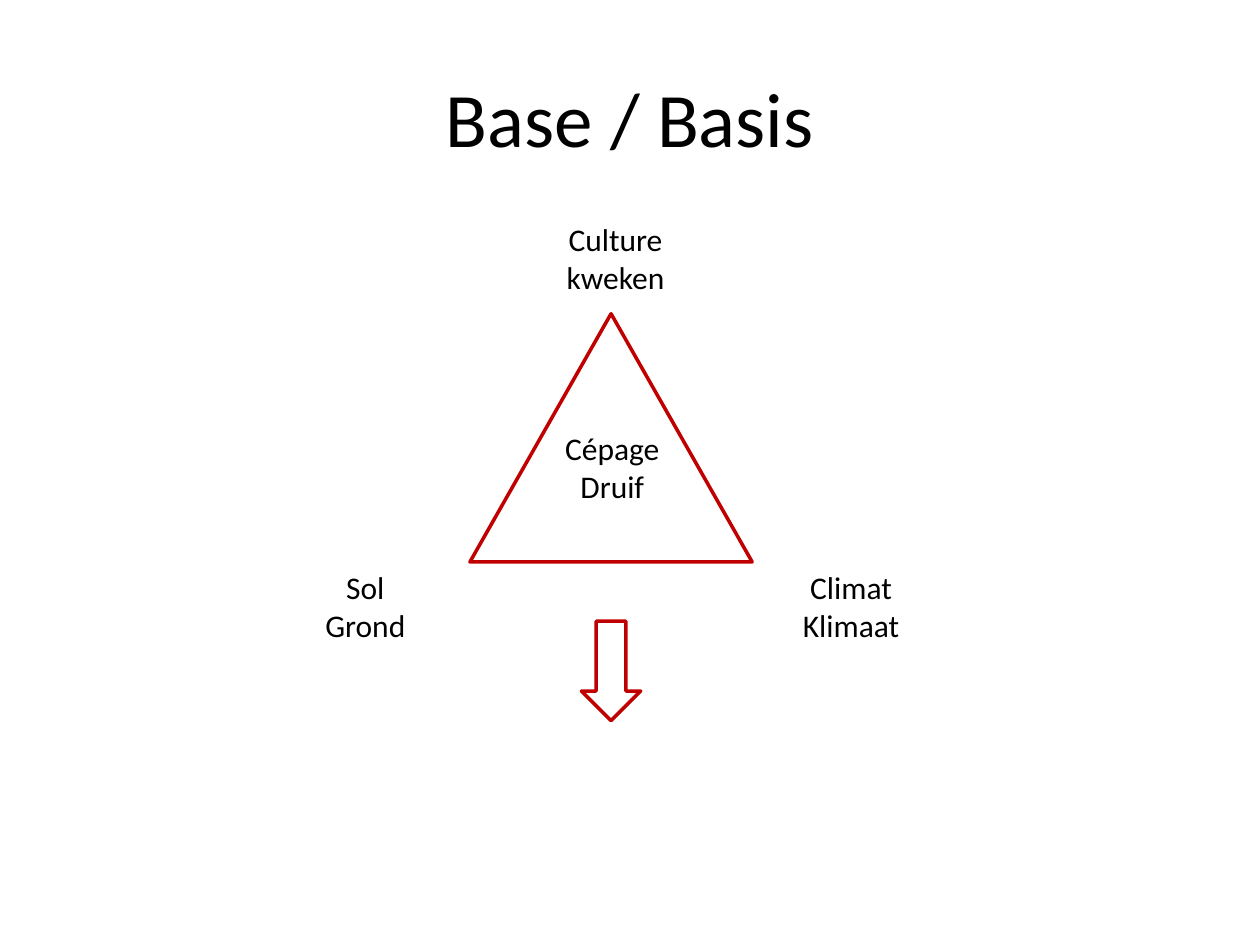
from dataclasses import dataclass

from pptx import Presentation, util as u
from pptx.dml.color import RGBColor
from pptx.enum import shapes, text

RED = RGBColor(0xC0, 0x00, 0x00)
BLACK = RGBColor(0x00, 0x00, 0x00)
WIDE, HIGH = u.Inches(10), u.Inches(7.5)
FONT = "Calibri"


@dataclass(frozen=True)
class Box:
    """Middle, top, width and height, as percent of the slide's size."""
    mid: float
    top: float
    width: float
    height: float

    def place(self) -> tuple[int, ...]:
        left = self.mid - self.width / 2
        pairs = ((left, WIDE), (self.top, HIGH), (self.width, WIDE), (self.height, HIGH))
        return tuple(round(part * full / 100) for part, full in pairs)


@dataclass(frozen=True)
class Label:
    words: str
    box: Box
    size: int = 18
    wrap: bool = False


@dataclass(frozen=True)
class Mark:
    kind: shapes.MSO_SHAPE
    box: Box


AXIS = 48.5
ROW = 9.47
BASE = 59.47

TITLE = Label("Base / Basis", Box(50, 4, 90, 16.67), 44, True)
MARKS = (
    Mark(shapes.MSO_SHAPE.DOWN_ARROW, Box(AXIS, 65.73, 4.7, 10.53)),
    Mark(shapes.MSO_SHAPE.ISOSCELES_TRIANGLE, Box(AXIS, 33.2, 22.4, 26.27)),
)
# \v breaks a line, \n starts a paragraph
LABELS = (
    Label("Cépage\vDruif", Box(48.6, 44.8, 9.6, ROW)),
    Label("Climat\nKlimaat", Box(67.55, BASE, 9.7, ROW)),
    Label("Culture\vkweken", Box(48.85, 22.67, 9.9, ROW)),
    Label("Sol\nGrond", Box(29, BASE, 8.4, ROW)),
)


def write(slide, label: Label) -> None:
    frame = slide.shapes.add_textbox(*label.box.place()).text_frame
    frame.text = label.words
    fit = text.MSO_AUTO_SIZE.NONE if label.wrap else text.MSO_AUTO_SIZE.SHAPE_TO_FIT_TEXT
    look = {"word_wrap": label.wrap, "auto_size": fit,
            "vertical_anchor": text.MSO_ANCHOR.MIDDLE if label.wrap else text.MSO_ANCHOR.TOP}
    for name, value in look.items():
        setattr(frame, name, value)
    for para in frame.paragraphs:
        para.alignment = text.PP_ALIGN.CENTER
        for run in para.runs:
            for name, value in {"name": FONT, "size": u.Pt(label.size)}.items():
                setattr(run.font, name, value)
            run.font.color.rgb = BLACK


def draw(slide, mark: Mark) -> None:
    shape = slide.shapes.add_shape(mark.kind, *mark.box.place())
    shape.shadow.inherit = False
    shape.fill.background()
    shape.line.color.rgb = RED
    shape.line.width = u.Pt(2)


def main() -> None:
    deck = Presentation()
    deck.slide_width, deck.slide_height = WIDE, HIGH
    slide = deck.slides.add_slide(deck.slide_layouts[6])
    write(slide, TITLE)
    for mark in MARKS:
        draw(slide, mark)
    for label in LABELS:
        write(slide, label)
    deck.save("out.pptx")


if __name__ == "__main__":
    main()
